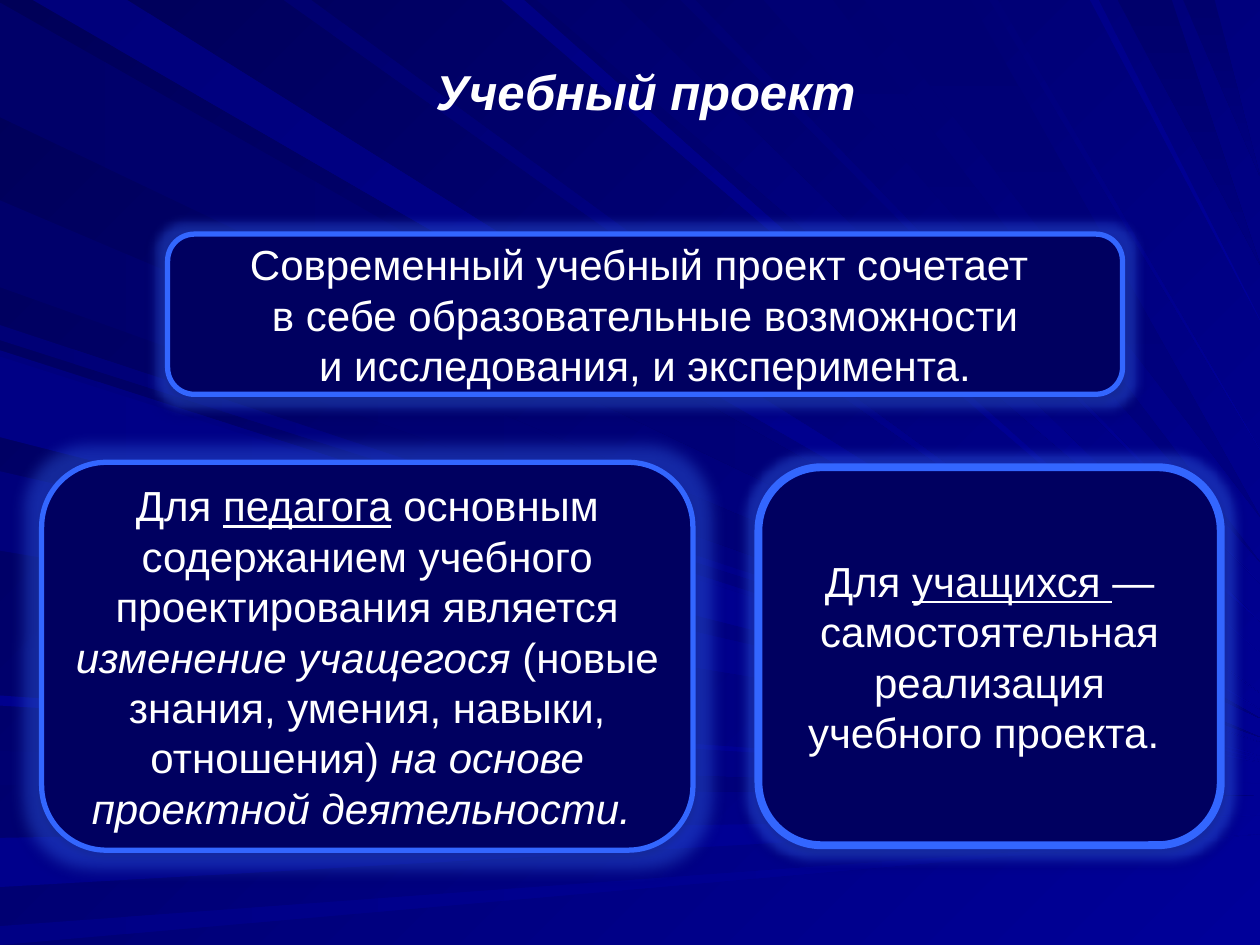
from lxml.etree import SubElement
from pptx import Presentation
from pptx.dml.color import RGBColor
from pptx.enum.shapes import MSO_SHAPE
from pptx.enum.text import MSO_ANCHOR, PP_ALIGN
from pptx.oxml.ns import qn
from pptx.util import Cm, Pt

COLORS = {
    "background_dark": "000058", "background_light": "000099", "ray_dim": "000080",
    "panel": "000060", "outline": "3366FF", "text": "FFFFFF", "shadow": "000000",
}
FONT = "Arial"
RAY_UNIT = Cm(0.0254)
RIGHT_EDGE = 1000

TITLE = {"runs": [[("Учебный проект", "")]], "place": (8.48, 1.12, 9.07, 1.45)}

PANELS = [
    {
        "place": (0.84, 9.32, 13.13, 7.82), "line": 3, "glow": 18,
        "runs": [[
            ("Для ", ""), ("педагога", "u"),
            (" основным содержанием учебного проектирования является ", ""),
            ("изменение учащегося ", "i"),
            ("(новые знания, умения, навыки, отношения) ", ""),
            ("на основе проектной деятельности. ", "i"),
        ]],
    },
    {
        "place": (3.38, 4.72, 19.25, 3.23), "line": 3, "glow": 11,
        "runs": [
            [("Современный учебный проект сочетает ", "")],
            [("в себе образовательные возможности", "")],
            [(" и исследования, и эксперимента. ", "")],
        ],
    },
    {
        "place": (15.29, 9.42, 9.32, 7.62), "line": 4.5, "glow": 11,
        "runs": [[
            ("Для ", ""), ("учащихся ", "u"),
            ("— самостоятельная реализация учебного проекта. ", ""),
        ]],
    },
]

# side of origin, start and end along that side, height of the tip, dark colour, light colour
RAYS = [
    ("left", 2, 93, 570, "000069", "ray_dim"),
    ("top", 26, 101, 563, "00007B", "background_light"),
    ("left", 596, 623, 632, "000071", "ray_dim"),
    ("left", 665, 704, 647, "00008C", "background_light"),
    ("left", 735, 750, 662, "000085", "background_light"),
    ("left", 258, 270, 589, "000076", "background_light"),
    ("left", 159, 228, 585, "00006B", "ray_dim"),
    ("top", 398, 416, 518, "000083", "background_light"),
    ("top", 426, 492, 493, "00006D", "background_light"),
    ("top", 540, 552, 463, "000073", "background_light"),
    ("top", 606, 661, 446, "000073", "ray_dim"),
    ("top", 887, 930, 210, "00006B", "ray_dim"),
    ("top", 939, 964, 140, "00006D", "ray_dim"),
    ("left", 278, 342, 600, "00007E", "background_light"),
    ("left", 374, 437, 605, "00007B", "background_light"),
    ("left", 552, 560, 622, "00008E", "background_light"),
    ("top", 225, 247, 550, "000070", "background_light"),
    ("top", 686, 770, 410, "000073", "ray_dim"),
    ("top", 785, 792, 357, "000078", "background_light"),
    ("top", 865, 872, 254, "00008A", "background_light"),
    ("left", 283, 347, 603, "000085", "background_light"),
]


def rgb(value):
    return RGBColor.from_string(value)


def paint_gradient(fill, start, end, angle):
    fill.gradient()
    fill.gradient_angle = -angle % 360
    for stop, color in zip(fill.gradient_stops, (start, end)):
        stop.color.rgb = rgb(color)


def add_rays(slide):
    rays = slide.shapes.add_group_shape().shapes
    for side, start, end, tip, dark, light in RAYS:
        if side == "left":
            base, angle = [(0, start), (0, end)], 0
        else:
            base, angle = [(start, 0), (end, 0)], 90 if light == "ray_dim" else 45
        builder = rays.build_freeform(*base[0], scale=float(RAY_UNIT))
        builder.add_line_segments([base[1], (RIGHT_EDGE, tip)], close=True)
        ray = builder.convert_to_shape()
        ray.shadow.inherit = False
        ray.line.fill.background()
        paint_gradient(ray.fill, dark, COLORS[light], angle)


def write_text(frame, paragraphs, size=24, bold=False, italic=False, anchor=MSO_ANCHOR.MIDDLE, wrap=True):
    frame.word_wrap = wrap
    frame.vertical_anchor = anchor
    for index, runs in enumerate(paragraphs):
        paragraph = frame.add_paragraph() if index else frame.paragraphs[0]
        paragraph.alignment = PP_ALIGN.CENTER
        for text, style in runs:
            run = paragraph.add_run()
            run.text = text
            run.font.name = FONT
            run.font.size = Pt(size)
            run.font.bold = bold
            run.font.italic = italic or style == "i"
            run.font.underline = style == "u"
            run.font.color.rgb = rgb(COLORS["text"])


def add_effect(effects, tag, color, alpha, **attributes):
    effect = SubElement(effects, qn(tag), {name: str(value) for name, value in attributes.items()})
    tint = SubElement(effect, qn("a:srgbClr"), val=color)
    SubElement(tint, qn("a:alpha"), val=str(alpha * 1000))


def add_panel(slide, place, line, glow, runs):
    panel = slide.shapes.add_shape(MSO_SHAPE.ROUNDED_RECTANGLE, *map(Cm, place))
    panel.fill.solid()
    panel.fill.fore_color.rgb = rgb(COLORS["panel"])
    panel.line.color.rgb = rgb(COLORS["outline"])
    panel.line.width = Pt(line)
    panel.shadow.inherit = False
    effects = panel.element.spPr.find(qn("a:effectLst"))
    add_effect(effects, "a:glow", COLORS["outline"], 40, rad=Pt(glow))
    add_effect(effects, "a:outerShdw", COLORS["shadow"], 32, blurRad=Pt(3.5), dist=Pt(2.2),
               dir=5400000, rotWithShape=0)
    write_text(panel.text_frame, runs)


def place_title(slide):
    title = slide.shapes.title
    slide.shapes.element.append(title.element)
    title.left, title.top, title.width, title.height = map(Cm, TITLE["place"])
    write_text(title.text_frame, TITLE["runs"], size=28, bold=True, italic=True,
               anchor=MSO_ANCHOR.TOP, wrap=False)


def main():
    """Build the slide about the study project."""
    presentation = Presentation()
    presentation.slide_width, presentation.slide_height = Cm(25.4), Cm(19.05)
    slide = presentation.slides.add_slide(presentation.slide_layouts[5])
    paint_gradient(slide.background.fill, COLORS["background_dark"], COLORS["background_light"], 45)
    add_rays(slide)
    for panel in PANELS:
        add_panel(slide, **panel)
    place_title(slide)
    presentation.save("out.pptx")


if __name__ == "__main__":
    main()
